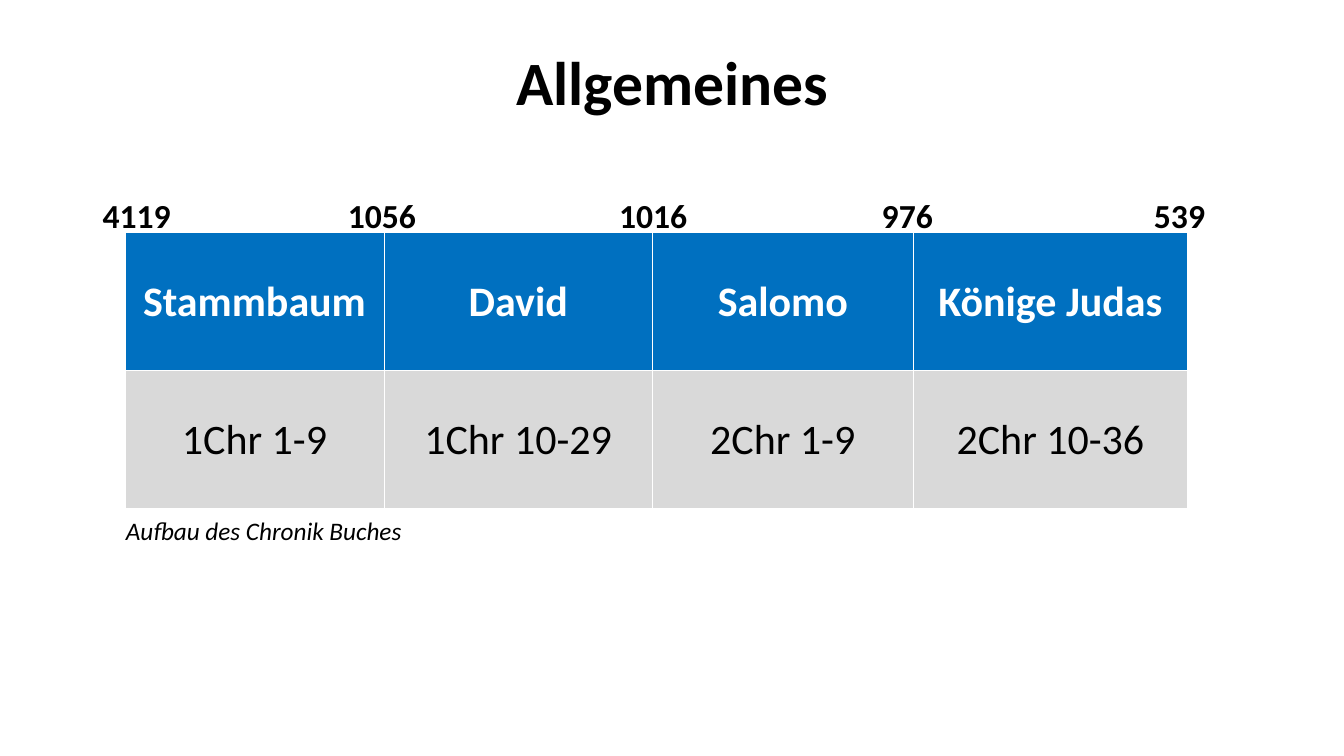
from lxml import etree
from pptx import Presentation
from pptx.dml.color import RGBColor
from pptx.enum.text import MSO_ANCHOR, MSO_AUTO_SIZE, PP_ALIGN
from pptx.oxml.ns import qn
from pptx.util import Inches, Pt

BLUE = RGBColor(0x00, 0x70, 0xC0)
GREY = RGBColor(0xD9, 0xD9, 0xD9)
WHITE = RGBColor(0xFF, 0xFF, 0xFF)
BLACK = RGBColor(0x00, 0x00, 0x00)
CENTER = PP_ALIGN.CENTER
MIDDLE = MSO_ANCHOR.MIDDLE
FIT_SHAPE = MSO_AUTO_SIZE.SHAPE_TO_FIT_TEXT

COLUMN_WIDTHS = [2.57, 2.66, 2.59, 2.72]
ROW_HEIGHT = 1.37
ROWS = [
    (["Stammbaum", "David", "Salomo", "Könige Judas"], BLUE, WHITE, True),
    (["1Chr 1-9", "1Chr 10-29", "2Chr 1-9", "2Chr 10-36"], GREY, BLACK, False),
]
YEARS = ["4119", "1056", "1016", "976", "539"]
YEAR_STOPS = [2.77, 5.46, 7.98, 10.68]


def set_font(p, size, color=BLACK, bold=False, italic=False):
    font = p.font
    font.name = "Calibri"
    font.size = Pt(size)
    font.color.rgb = color
    font.bold = bold
    font.italic = italic


prs = Presentation()
prs.slide_width = Inches(13.33)
prs.slide_height = Inches(7.5)
s = prs.slides.add_slide(prs.slide_layouts[5])

# Title
title = s.shapes.title
title.left, title.top = Inches(0.92), Inches(0.4)
title.width, title.height = Inches(11.5), Inches(0.89)
tf = title.text_frame
tf.text = "Allgemeines"
tf.vertical_anchor = MIDDLE
p = tf.paragraphs[0]
p.alignment = CENTER
p.line_spacing = 0.9
set_font(p, 44, bold=True)

# Table of sections
table = s.shapes.add_table(
    len(ROWS), len(COLUMN_WIDTHS), Inches(1.24), Inches(2.31),
    Inches(sum(COLUMN_WIDTHS)), Inches(ROW_HEIGHT * len(ROWS))).table
for column, width in zip(table.columns, COLUMN_WIDTHS):
    column.width = Inches(width)
for row, (labels, fill, color, bold) in zip(table.rows, ROWS):
    row.height = Inches(ROW_HEIGHT)
    for cell, label in zip(row.cells, labels):
        cell.text = label
        cell.fill.solid()
        cell.fill.fore_color.rgb = fill
        cell.vertical_anchor = MIDDLE
        cell.margin_left = cell.margin_right = Inches(0.14)
        cell.margin_top = cell.margin_bottom = 0
        p = cell.text_frame.paragraphs[0]
        p.alignment = CENTER
        set_font(p, 30, color, bold)

# Caption
caption = s.shapes.add_textbox(Inches(1.15), Inches(5.06), Inches(2.96), Inches(0.4))
tf = caption.text_frame
tf.text = "Aufbau des Chronik Buches"
tf.word_wrap = False
tf.auto_size = FIT_SHAPE
set_font(tf.paragraphs[0], 18, italic=True)

# Years above the column edges, centred on tab stops
years = s.shapes.add_textbox(Inches(0.92), Inches(1.88), Inches(12.28), Inches(0.5))
tf = years.text_frame
tf.text = "\t".join(YEARS)
tf.word_wrap = True
tf.auto_size = FIT_SHAPE
tf.vertical_anchor = MIDDLE
p = tf.paragraphs[0]
tabs = etree.SubElement(p._p.get_or_add_pPr(), qn("a:tabLst"))
for stop in YEAR_STOPS:
    etree.SubElement(tabs, qn("a:tab"), pos=str(Inches(stop)), algn="ctr")
set_font(p, 24, bold=True)

prs.save("out.pptx")
